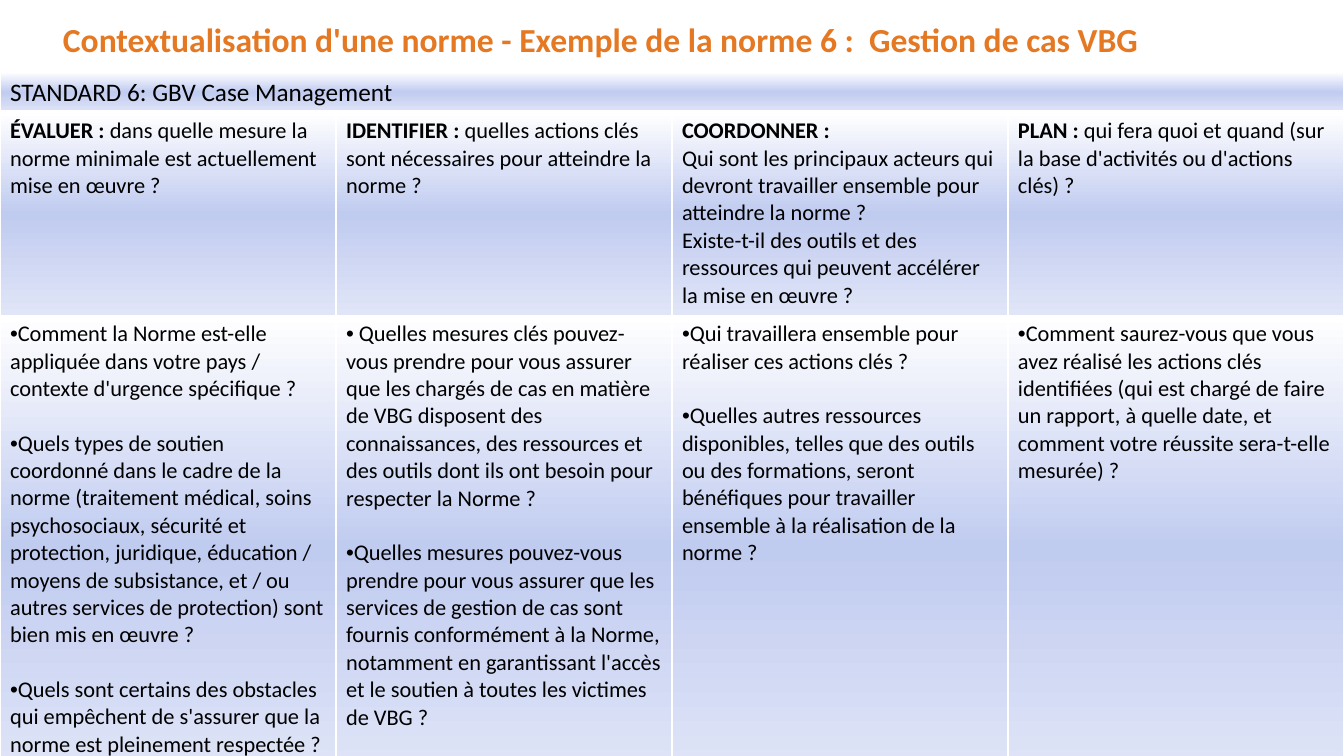
from lxml import etree
from pptx import Presentation
from pptx.dml.color import RGBColor
from pptx.enum.text import MSO_ANCHOR
from pptx.oxml import parse_xml
from pptx.oxml.ns import nsdecls, qn
from pptx.util import Emu, Pt

MIDDLE = MSO_ANCHOR.MIDDLE
FONT = "Calibri"
ORANGE, BLACK, WHITE = "E47823", "000000", "FFFFFF"
GRADIENT = [(0, WHITE), (50, "C0CBF0"), (100, "E0E5F7")]
EMU_PER_PX = 914400 / 100.8
COLUMN_WIDTH = 336
ROW_HEIGHTS = [39, 203, 464]
BLANK_LINE = 19.5

TITLE = "Contextualisation d'une norme - Exemple de la norme 6 :  Gestion de cas VBG"
STANDARD = "STANDARD 6: GBV Case Management"

# Each step: bold label, text after it, further paragraphs
STEPS = [
    ("ÉVALUER :", " dans quelle mesure la norme minimale est actuellement mise en œuvre ?", []),
    ("IDENTIFIER : ", "quelles actions clés sont nécessaires pour atteindre la norme ?", []),
    ("COORDONNER :", "", [
        "Qui sont les principaux acteurs qui devront travailler ensemble pour atteindre la norme ?",
        "Existe-t-il des outils et des ressources qui peuvent accélérer la mise en œuvre ?",
    ]),
    ("PLAN : ", "qui fera quoi et quand (sur la base d'activités ou d'actions clés) ?", []),
]

QUESTIONS = [
    [
        "Comment la Norme est-elle appliquée dans votre pays / contexte d'urgence spécifique ?",
        "Quels types de soutien coordonné dans le cadre de la norme (traitement médical, "
        "soins psychosociaux, sécurité et protection, juridique, éducation / moyens de "
        "subsistance, et / ou autres services de protection) sont bien mis en œuvre ?",
        "Quels sont certains des obstacles qui empêchent de s'assurer que la norme est "
        "pleinement respectée ?",
    ],
    [
        " Quelles mesures clés pouvez-vous prendre pour vous assurer que les chargés de cas "
        "en matière de VBG disposent des connaissances, des ressources et des outils dont "
        "ils ont besoin pour respecter la Norme ?",
        "Quelles mesures pouvez-vous prendre pour vous assurer que les services de gestion "
        "de cas sont fournis conformément à la Norme, notamment en garantissant l'accès et "
        "le soutien à toutes les victimes de VBG ?",
    ],
    [
        "Qui travaillera ensemble pour réaliser ces actions clés ?",
        "Quelles autres ressources disponibles, telles que des outils ou des formations, "
        "seront bénéfiques pour travailler ensemble à la réalisation de la norme ?",
    ],
    [
        "Comment saurez-vous que vous avez réalisé les actions clés identifiées (qui est "
        "chargé de faire un rapport, à quelle date, et comment votre réussite "
        "sera-t-elle mesurée) ?",
    ],
]


def px(length):
    return Emu(round(length * EMU_PER_PX))


def rgb(color):
    return RGBColor.from_string(color)


def format_run(run, size, color=BLACK, bold=False):
    run.font.name = FONT
    run.font.size = Pt(size)
    run.font.bold = bold
    run.font.color.rgb = rgb(color)


def add_title(slide, text):
    text_frame = slide.shapes.add_textbox(px(53), px(8), px(1254), px(67)).text_frame
    text_frame.word_wrap = True
    text_frame.vertical_anchor = MIDDLE
    text_frame.text = text
    paragraph = text_frame.paragraphs[0]
    paragraph.line_spacing = 0.9
    format_run(paragraph.runs[0], 24, ORANGE, True)


def add_bullet(paragraph):
    properties = paragraph._p.get_or_add_pPr()
    properties.set("marL", "0")
    properties.set("indent", "0")
    etree.SubElement(properties, qn("a:buFont")).set("typeface", "Arial")
    etree.SubElement(properties, qn("a:buChar")).set("char", "•")


def write_step(cell, label, text, details):
    text_frame = cell.text_frame
    text_frame.text = "\n".join([label, *details])
    heading, *others = text_frame.paragraphs
    format_run(heading.runs[0], 16, bold=True)
    if text:
        run = heading.add_run()
        run.text = text
        format_run(run, 16)
    for paragraph in others:
        format_run(paragraph.runs[0], 16)


def write_questions(cell, questions):
    cell.text_frame.text = "\n".join(questions)
    for index, paragraph in enumerate(cell.text_frame.paragraphs):
        if index:
            paragraph.space_before = Pt(BLANK_LINE)
        add_bullet(paragraph)
        format_run(paragraph.runs[0], 16)


def style_cell(cell, row):
    properties = cell._tc.get_or_add_tcPr()
    # Borders: a thicker line separates the heading row
    for side in "LRTB":
        thick = (row, side) in ((0, "B"), (1, "T"))
        width = Pt(3 if thick else 1)
        properties.append(parse_xml(
            f'<a:ln{side} {nsdecls("a")} w="{width}"><a:solidFill>'
            f'<a:srgbClr val="{WHITE}"/></a:solidFill></a:ln{side}>'))
    # Vertical three-stop gradient
    stops = "".join(
        f'<a:gs pos="{position * 1000}"><a:srgbClr val="{color}"/></a:gs>'
        for position, color in GRADIENT)
    properties.append(parse_xml(
        f'<a:gradFill {nsdecls("a")} rotWithShape="1"><a:gsLst>{stops}</a:gsLst>'
        '<a:lin ang="5400000" scaled="0"/></a:gradFill>'))


def add_standard_table(slide):
    columns = len(STEPS)
    table = slide.shapes.add_table(
        len(ROW_HEIGHTS), columns, px(0), px(72),
        px(COLUMN_WIDTH * columns), px(sum(ROW_HEIGHTS))).table
    table.first_row = False
    table.horz_banding = False
    for column in table.columns:
        column.width = px(COLUMN_WIDTH)
    for index, height in enumerate(ROW_HEIGHTS):
        table.rows[index].height = px(height)
        for cell in table.rows[index].cells:
            style_cell(cell, index)

    # Heading across all columns
    heading = table.cell(0, 0)
    heading.merge(table.cell(0, columns - 1))
    heading.text_frame.text = STANDARD
    format_run(heading.text_frame.paragraphs[0].runs[0], 18)

    # One column per step
    for column, (step, questions) in enumerate(zip(STEPS, QUESTIONS)):
        write_step(table.cell(1, column), *step)
        write_questions(table.cell(2, column), questions)


def main():
    presentation = Presentation()
    presentation.slide_width = px(1344)
    presentation.slide_height = px(756)
    slide = presentation.slides.add_slide(presentation.slide_layouts[6])
    add_title(slide, TITLE)
    add_standard_table(slide)
    presentation.save("out.pptx")


if __name__ == "__main__":
    main()
